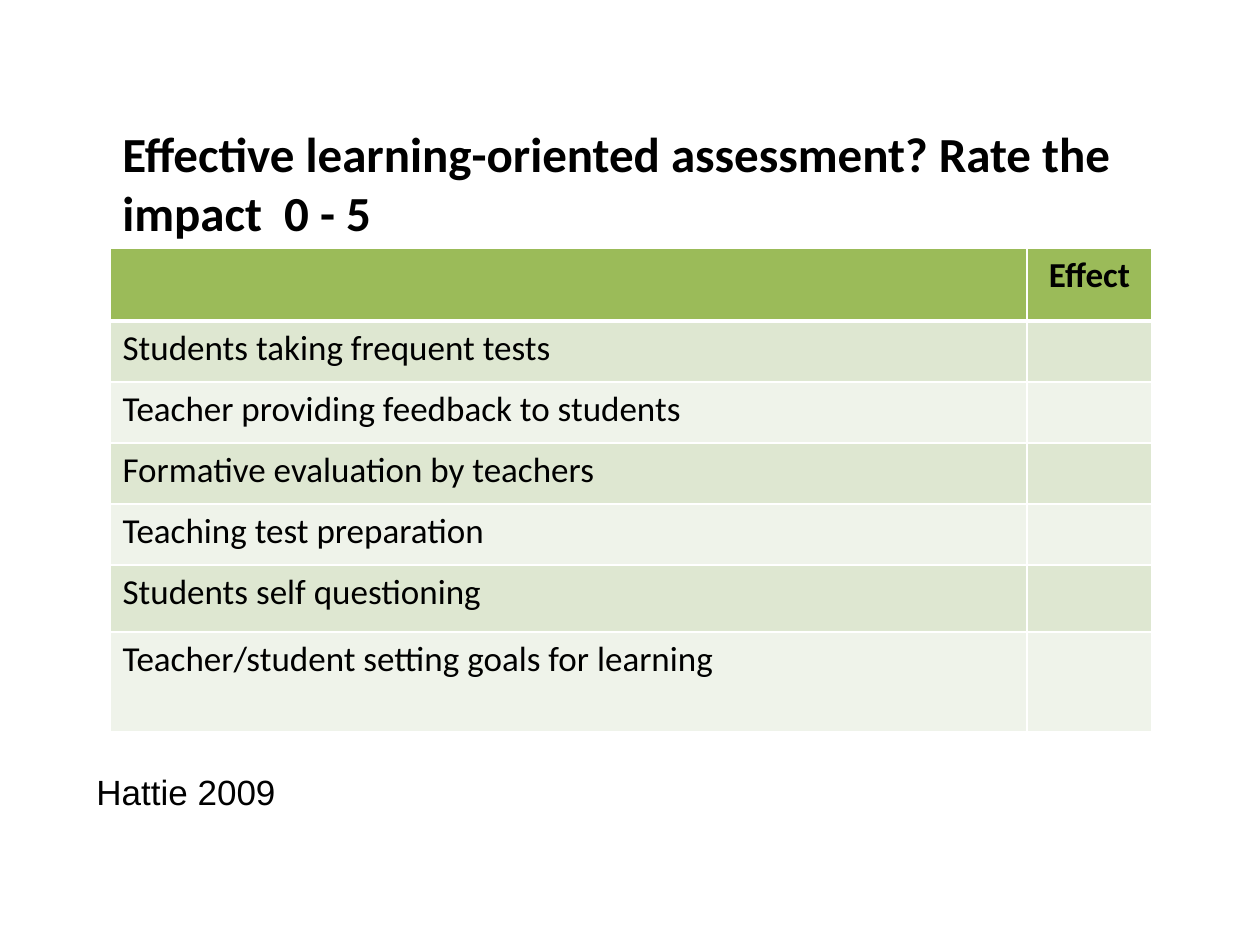
from dataclasses import dataclass

from lxml import etree
from pptx import Presentation
from pptx.dml.color import RGBColor
from pptx.enum import text
from pptx.oxml.ns import qn
from pptx.util import Emu, Pt

EMU_PER_INCH = 914400
PX_PER_INCH = 126
BLACK, WHITE = "000000", "FFFFFF"
HEADER_FILL = "9BBB59"
BAND_FILLS = ("DEE7D1", "EFF3EA")

COLUMN_WIDTHS = (917, 125)
ROW_HEIGHTS = (73, 61, 61, 61, 61, 67, 100)
PRACTICES = (
    "Students taking frequent tests",
    "Teacher providing feedback to students",
    "Formative evaluation by teachers",
    "Teaching test preparation",
    "Students self questioning",
    "Teacher/student setting goals for learning",
)


@dataclass
class Label:
    wording: str
    left: int
    top: int
    width: int
    height: int
    font: str
    size: int
    bold: bool = False


LABELS = (
    Label("Effective learning-oriented assessment? Rate the impact  0 - 5",
          110, 117, 1042, 131, "Calibri", 28, True),
    Label("Hattie 2009", 84, 764, 208, 55, "Arial", 20),
)


def px(length: int) -> Emu:
    return Emu(round(length * EMU_PER_INCH / PX_PER_INCH))


def color(value: str) -> RGBColor:
    return RGBColor.from_string(value)


def style_text(frame, font: str, size: int, bold: bool) -> None:
    for para in frame.paragraphs:
        for span in para.runs:
            span.font.name = font
            span.font.size = Pt(size)
            span.font.bold = bold
            span.font.color.rgb = color(BLACK)


def add_label(page, label: Label) -> None:
    box = page.shapes.add_textbox(px(label.left), px(label.top),
                                  px(label.width), px(label.height))
    frame = box.text_frame
    frame.word_wrap = True
    frame.text = label.wording
    style_text(frame, label.font, label.size, label.bold)


def set_borders(cell, bottom_points: int, top_points: int) -> None:
    """Draw white borders; they must precede the fill in the cell properties."""
    properties = cell._tc.get_or_add_tcPr()
    widths = {"a:lnL": 1, "a:lnR": 1, "a:lnT": top_points, "a:lnB": bottom_points}
    for position, (tag, points) in enumerate(widths.items()):
        line = etree.Element(qn(tag), w=str(Pt(points)))
        fill = etree.SubElement(line, qn("a:solidFill"))
        etree.SubElement(fill, qn("a:srgbClr"), val=WHITE)
        properties.insert(position, line)


def add_rating_table(page) -> None:
    rows = [("", "Effect")] + [(practice, "") for practice in PRACTICES]
    table = page.shapes.add_table(
        len(rows), len(COLUMN_WIDTHS), px(110), px(248),
        px(sum(COLUMN_WIDTHS)), px(sum(ROW_HEIGHTS))).table
    for column, width in zip(table.columns, COLUMN_WIDTHS):
        column.width = px(width)
    for row, height in zip(table.rows, ROW_HEIGHTS):
        row.height = px(height)

    for row_index, wordings in enumerate(rows):
        header = row_index == 0
        fill = HEADER_FILL if header else BAND_FILLS[(row_index - 1) % 2]
        for column_index, wording in enumerate(wordings):
            cell = table.cell(row_index, column_index)
            cell.fill.solid()
            cell.fill.fore_color.rgb = color(fill)
            set_borders(cell, bottom_points=3 if header else 1,
                        top_points=3 if row_index == 1 else 1)
            if wording:
                cell.text_frame.text = wording
                style_text(cell.text_frame, "Calibri", 20, header)
                if header:
                    cell.text_frame.paragraphs[0].alignment = text.PP_ALIGN.CENTER


def main() -> None:
    deck = Presentation()
    deck.slide_width, deck.slide_height = px(1260), px(945)
    page = deck.slides.add_slide(deck.slide_layouts[6])

    # Rating table
    add_rating_table(page)

    # Heading and source
    for label in LABELS:
        add_label(page, label)

    deck.save("out.pptx")


if __name__ == "__main__":
    main()
